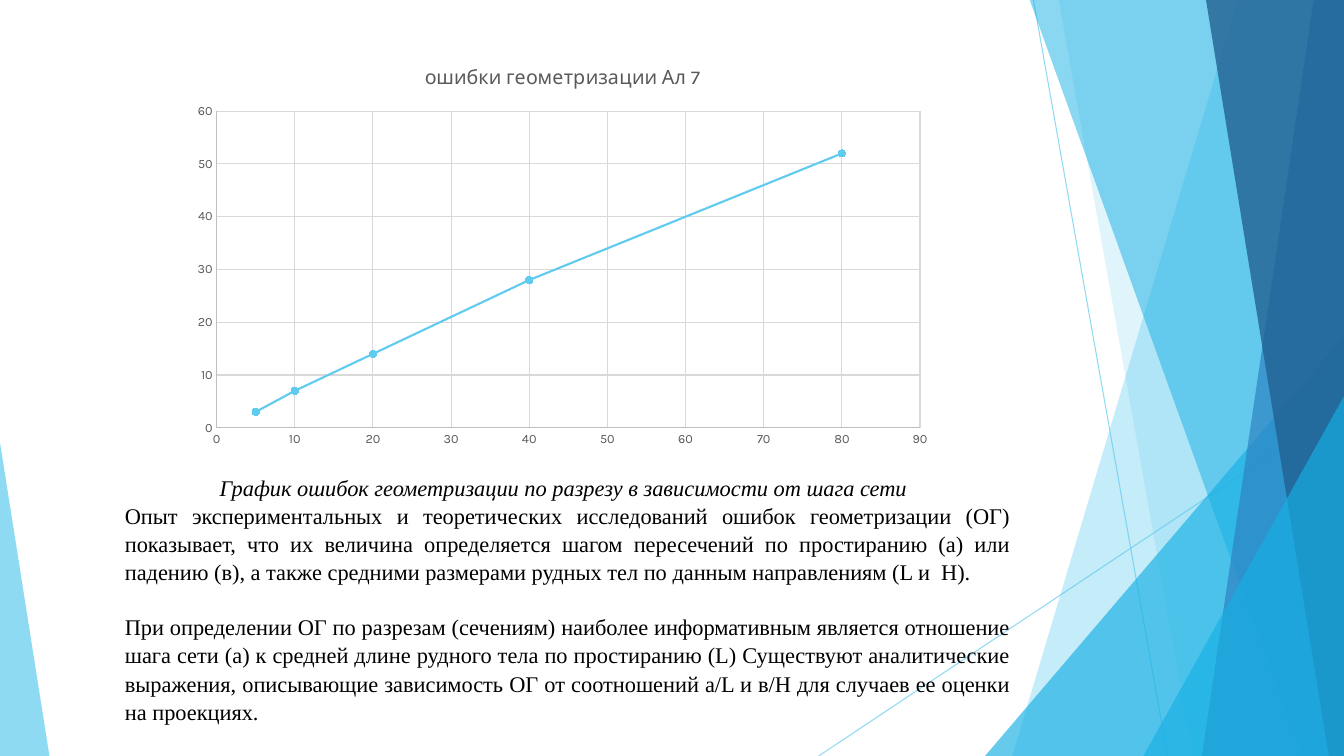
from lxml import etree
from pptx import Presentation
from pptx.chart.data import XyChartData
from pptx.dml.color import RGBColor
from pptx.enum.chart import XL_CHART_TYPE, XL_MARKER_STYLE, XL_TICK_MARK
from pptx.enum.shapes import MSO_CONNECTOR, MSO_SHAPE
from pptx.enum.text import PP_ALIGN
from pptx.oxml.ns import qn
from pptx.util import Inches, Pt

SCATTER = XL_CHART_TYPE.XY_SCATTER_SMOOTH
CIRCLE = XL_MARKER_STYLE.CIRCLE
NO_TICK = XL_TICK_MARK.NONE
STRAIGHT = MSO_CONNECTOR.STRAIGHT
TRIANGLE = MSO_SHAPE.ISOSCELES_TRIANGLE
JUSTIFY = PP_ALIGN.JUSTIFY

WIDTH, HEIGHT = 13.33, 7.5
TOP = -0.01
SKY, CYAN, BLUE, NAVY = "5FCBEF", "17B0E4", "2E83C3", "226292"
BLACK, GRAY, AXIS, GRID = "000000", "595959", "BFBFBF", "D9D9D9"

TITLE = "ошибки геометризации Ал 7"
STEPS = [5, 10, 20, 40, 80]
ERRORS = [3, 7, 14, 28, 52]
CAPTION = "График ошибок геометризации по разрезу в зависимости от шага сети"
BODY = [
    "Опыт экспериментальных и теоретических исследований ошибок геометризации (ОГ) "
    "показывает, что их величина определяется шагом пересечений по простиранию (а) или "
    "падению (в), а также средними размерами рудных тел по данным направлениям (L и  H).",
    "При определении ОГ по разрезам (сечениям) наиболее информативным является отношение "
    "шага сети (а) к средней длине рудного тела по простиранию (L) Существуют аналитические "
    "выражения, описывающие зависимость ОГ от соотношений а/L и в/H для случаев ее оценки "
    "на проекциях.",
]


def color(code):
    return RGBColor.from_string(code)


def fade(shape, percent):
    """Set the opacity of every colour of the shape."""
    for clr in shape.element.spPr.iter(qn("a:srgbClr")):
        etree.SubElement(clr, qn("a:alpha"), val=str(percent * 1000))


class Deck:
    chart_font = "Karla"
    text_font = "Times New Roman"

    def __init__(self):
        self.prs = Presentation()
        self.prs.slide_width, self.prs.slide_height = Inches(WIDTH), Inches(HEIGHT)
        self.slide = self.prs.slides.add_slide(self.prs.slide_layouts[6])
        self.shapes = self.slide.shapes

    def line(self, *ends):
        line = self.shapes.add_connector(STRAIGHT, *map(Inches, ends))
        self.stroke(line.line, SKY, 0.75)
        etree.SubElement(line.element.spPr, qn("a:effectLst"))
        fade(line, 70)

    def stroke(self, line, code, width):
        line.color.rgb = color(code)
        line.width = Pt(width)

    def paint(self, shape, code, alpha):
        shape.shadow.inherit = False
        shape.fill.solid()
        shape.fill.fore_color.rgb = color(code)
        shape.line.fill.background()
        fade(shape, alpha)

    def ribbon(self, top, bottom, code, alpha):
        """Fill from a slanted left edge to the right side of the slide."""
        form = self.shapes.build_freeform(Inches(top), Inches(TOP))
        corners = [(WIDTH, TOP), (WIDTH, HEIGHT), (bottom, HEIGHT)]
        form.add_line_segments([(Inches(x), Inches(y)) for x, y in corners])
        self.paint(form.convert_to_shape(), code, alpha)

    def wedge(self, box, apex, code, alpha):
        shape = self.shapes.add_shape(TRIANGLE, *map(Inches, box))
        shape.adjustments[0] = apex
        self.paint(shape, code, alpha)

    def font(self, font, name, size, code):
        font.name, font.size = name, Pt(size)
        font.color.rgb = color(code)

    def axis(self, axis, limit):
        axis.minimum_scale, axis.maximum_scale, axis.major_unit = 0, limit, 10
        axis.major_tick_mark = axis.minor_tick_mark = NO_TICK
        axis.has_major_gridlines = True
        self.stroke(axis.format.line, AXIS, 0.75)
        self.stroke(axis.major_gridlines.format.line, GRID, 0.75)
        self.font(axis.tick_labels.font, self.chart_font, 9, GRAY)

    def chart(self, box):
        data = XyChartData()
        points = data.add_series("Series 1")
        for step, error in zip(STEPS, ERRORS):
            points.add_data_point(step, error)
        chart = self.shapes.add_chart(SCATTER, *map(Inches, box), data).chart
        self.font(chart.font, self.chart_font, 10, BLACK)
        chart.has_legend = False
        chart.has_title = True
        head = chart.chart_title.text_frame
        head.text = TITLE
        self.font(head.paragraphs[0].runs[0].font, self.chart_font, 14, GRAY)
        head.paragraphs[0].runs[0].font.bold = False
        chart.chart_title.include_in_layout = False
        self.axis(chart.category_axis, 90)
        self.axis(chart.value_axis, 60)
        plot = chart.plots[0]
        plot.vary_by_categories = False
        curve = plot.series[0]
        curve.smooth = True
        self.stroke(curve.format.line, SKY, 1.5)
        mark = curve.marker
        mark.style, mark.size = CIRCLE, 5
        mark.format.fill.solid()
        mark.format.fill.fore_color.rgb = color(SKY)
        self.stroke(mark.format.line, SKY, 0.75)

    def text(self, box):
        frame = self.shapes.add_textbox(*map(Inches, box)).text_frame
        frame.word_wrap = True
        frame.text = "\n".join([CAPTION, *BODY])
        for para in frame.paragraphs:
            para.alignment = JUSTIFY
            para.line_spacing = 1.05
            self.font(para.runs[0].font, self.text_font, 16, BLACK)
        first, last = frame.paragraphs[0], frame.paragraphs[-1]
        first.runs[0].font.italic = True
        props = first._p.get_or_add_pPr()
        props.set("marL", "0")
        props.set("indent", str(Inches(0.94)))
        last.space_before = Pt(19)


def main():
    deck = Deck()
    deck.line(10.25, 0, 11.58, HEIGHT)
    deck.line(WIDTH, 4.03, 8.12, HEIGHT)
    deck.ribbon(12.28, 10.04, SKY, 36)
    deck.ribbon(10.5, 11.83, SKY, 20)
    deck.wedge((9.77, 3.33, 3.56, 4.17), 1, CYAN, 66)
    deck.ribbon(10.21, 12.91, CYAN, 50)
    deck.ribbon(13.03, 11.92, BLUE, 70)
    deck.ribbon(11.96, 13.18, NAVY, 80)
    deck.wedge((11.34, 3.93, 1.99, 3.57), 1, CYAN, 66)
    deck.wedge((0, 4.39, 0.49, 3.11), 0, SKY, 70)
    deck.chart((1.81, 0.47, 7.54, 4.04))
    deck.text((1.14, 4.64, 8.98, 2.52))
    deck.prs.save("out.pptx")


if __name__ == "__main__":
    main()
